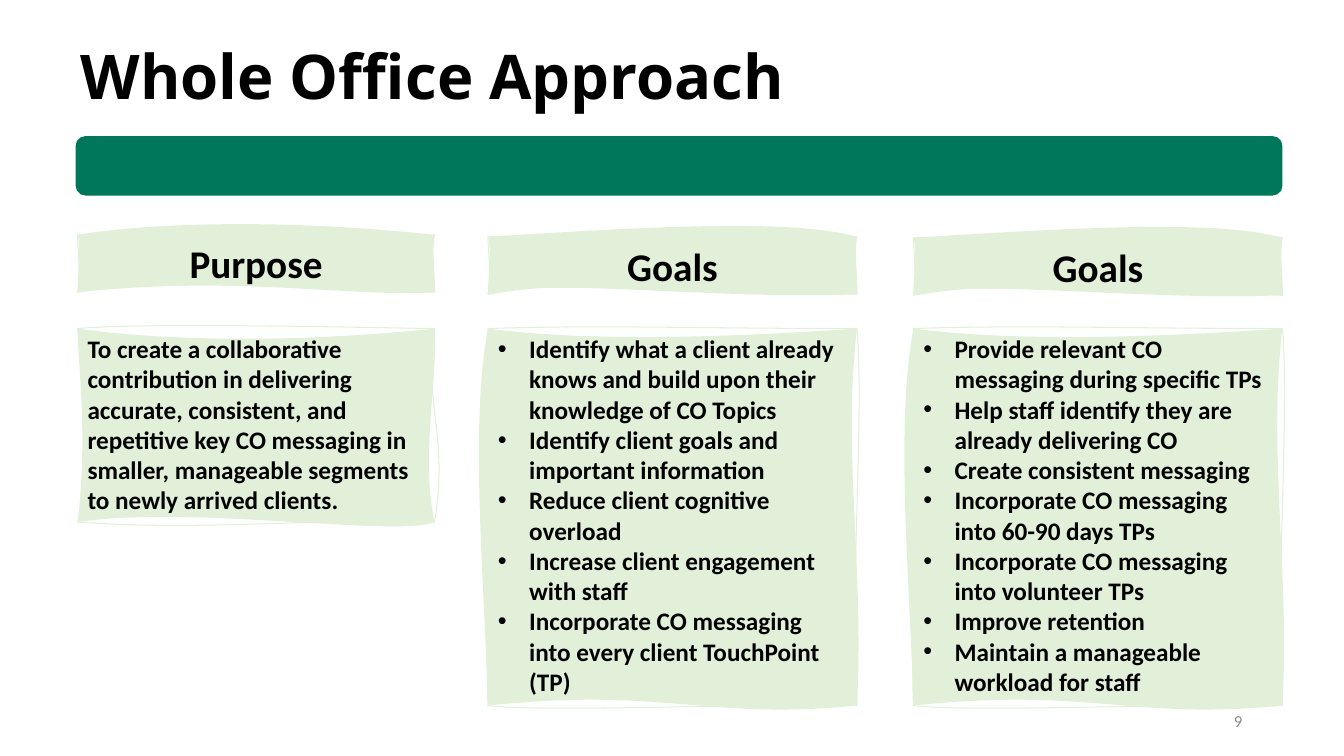
import dataclasses

import lxml.etree
import pptx
import pptx.dml.color
import pptx.enum.shapes
import pptx.enum.text
import pptx.oxml.ns
import pptx.util

Inches = pptx.util.Inches
Align = pptx.enum.text.PP_ALIGN
Anchor = pptx.enum.text.MSO_ANCHOR
qn = pptx.oxml.ns.qn


@dataclasses.dataclass(frozen=True)
class Theme:
    green: str = "00765A"
    pale: str = "E2F0D9"
    ink: str = "000000"
    grey: str = "8C8C8C"
    title_font: str = "Open Sans"
    text_font: str = "Calibri"
    title_size: int = 44
    heading_size: int = 28
    body_size: int = 18
    number_size: int = 12
    bullet_indent: float = 0.31


THEME = Theme()


@dataclasses.dataclass(frozen=True)
class Box:
    left: float
    top: float
    width: float
    height: float

    def lengths(self):
        return [Inches(v) for v in (self.left, self.top, self.width, self.height)]


@dataclasses.dataclass(frozen=True)
class Wave:
    """Curve handles in percent of the box, two for each side, clockwise from the top."""
    outline: tuple
    fill: tuple


CORNERS = ((100, 0), (100, 100), (0, 100), (0, 0))
HEADING_WAVE_NARROW = Wave(
    ((35, -5), (71, 28), (99, 14), (100, 73), (64, 74), (24, 74), (1, 66), (0, 25)),
    ((18, -19), (55, -30), (99, 33), (100, 56), (76, 109), (45, 70), (0, 75), (1, 16)))
HEADING_WAVE_WIDE = Wave(
    ((35, -7), (77, 26), (99, 13), (100, 74), (51, 74), (23, 74), (1, 66), (0, 25)),
    ((46, -19), (83, -31), (99, 32), (100, 54), (61, 110), (16, 70), (0, 75), (1, 16)))
BODY_WAVE_SHORT = Wave(
    ((17, -3), (69, -1), (97, 42), (104, 55), (73, 97), (38, 105), (4, 80), (3, 45)),
    ((27, 7), (64, 7), (101, 27), (96, 65), (90, 108), (31, 91), (3, 54), (0, 17)))
BODY_WAVE_TALL = Wave(
    ((30, -1), (58, 0), (102, 24), (98, 69), (84, 99), (16, 102), (-1, 70), (2, 37)),
    ((23, 3), (56, 3), (96, 33), (102, 63), (59, 104), (48, 95), (-1, 66), (-5, 26)))

PURPOSE = ["To create a collaborative contribution in delivering accurate, consistent, and "
           "repetitive key CO messaging in smaller, manageable segments to newly arrived "
           "clients."]
CLIENT_GOALS = [
    "Identify what a client already knows and build upon their knowledge of CO Topics",
    "Identify client goals and important information",
    "Reduce client cognitive overload",
    "Increase client engagement with staff",
    "Incorporate CO messaging into every client TouchPoint (TP)",
]
STAFF_GOALS = [
    "Provide relevant CO messaging during specific TPs",
    "Help staff identify they are already delivering CO",
    "Create consistent messaging",
    "Incorporate CO messaging into 60-90 days TPs",
    "Incorporate CO messaging into volunteer TPs",
    "Improve retention",
    "Maintain a manageable workload for staff",
]


def rgb(colour):
    return pptx.dml.color.RGBColor.from_string(colour)


def write(frame, lines, size, colour=THEME.ink, font=THEME.text_font, bold=True,
          align=Align.LEFT, anchor=Anchor.TOP, bulleted=False):
    frame.word_wrap = True
    frame.vertical_anchor = anchor
    frame.text = "\n".join(lines)
    for paragraph in frame.paragraphs:
        paragraph.alignment = align
        paragraph.font.name = font
        paragraph.font.size = pptx.util.Pt(size)
        paragraph.font.bold = bold
        paragraph.font.color.rgb = rgb(colour)
        if bulleted:
            add_bullet(paragraph)


def add_bullet(paragraph):
    properties = paragraph._p.get_or_add_pPr()
    indent = Inches(THEME.bullet_indent)
    properties.set("marL", str(indent))
    properties.set("indent", str(-indent))
    bullet_font = lxml.etree.Element(qn("a:buFont"), typeface="Arial")
    bullet = lxml.etree.Element(qn("a:buChar"), char="•")
    properties.insert_element_before(bullet_font, "a:tabLst", "a:defRPr", "a:extLst")
    properties.insert_element_before(bullet, "a:tabLst", "a:defRPr", "a:extLst")


def add_curves(contours, handles, **options):
    """Append one closed contour whose sides are cubic curves."""
    contour = lxml.etree.SubElement(contours, qn("a:path"), w="100", h="100", **options)

    def add_step(tag, points):
        step = lxml.etree.SubElement(contour, qn(tag))
        for x, y in points:
            lxml.etree.SubElement(step, qn("a:pt"), x=str(x), y=str(y))

    add_step("a:moveTo", [CORNERS[-1]])
    for side, corner in enumerate(CORNERS):
        add_step("a:cubicBezTo", [*handles[2 * side:2 * side + 2], corner])
    add_step("a:close", [])


def add_wavy_panel(slide, box, wave):
    """Add a panel whose hand-drawn outline and fill follow different curves."""
    left, top, width, height = box.lengths()
    builder = slide.shapes.build_freeform(left, top)
    builder.add_line_segments(
        [(left + width, top), (left + width, top + height), (left, top + height)])
    panel = builder.convert_to_shape()
    contours = panel._element.spPr.find(".//" + qn("a:pathLst"))
    for straight in list(contours):
        contours.remove(straight)
    add_curves(contours, wave.outline, fill="none")
    add_curves(contours, wave.fill, stroke="0")
    panel.shadow.inherit = False
    panel.fill.solid()
    panel.fill.fore_color.rgb = rgb(THEME.pale)
    panel.line.color.rgb = rgb(THEME.pale)
    panel.line.width = pptx.util.Pt(0.75)
    return panel


def add_column(slide, box, heading, lines, heading_wave, body_wave, bulleted=True):
    heading_height, body_top = 0.57, 3.26
    heading_box = Box(box.left, box.top, box.width, heading_height)
    heading_panel = add_wavy_panel(slide, heading_box, heading_wave)
    write(heading_panel.text_frame, [heading], THEME.heading_size, align=Align.CENTER)

    body_box = Box(box.left, body_top, box.width, box.top + box.height - body_top)
    body_panel = add_wavy_panel(slide, body_box, body_wave)
    write(body_panel.text_frame, lines, THEME.body_size, bulleted=bulleted)


def add_title(slide, box, text):
    title = slide.shapes.title
    title.left, title.top, title.width, title.height = box.lengths()
    write(title.text_frame, [text], THEME.title_size, font=THEME.title_font,
          anchor=Anchor.MIDDLE)


def add_bar(slide, box):
    bar = slide.shapes.add_shape(
        pptx.enum.shapes.MSO_SHAPE.ROUNDED_RECTANGLE, *box.lengths())
    bar.shadow.inherit = False
    bar.fill.solid()
    bar.fill.fore_color.rgb = rgb(THEME.green)
    bar.line.fill.background()


def add_slide_number(slide, box, number):
    frame = slide.shapes.add_textbox(*box.lengths()).text_frame
    write(frame, [number], THEME.number_size, THEME.grey, bold=False,
          align=Align.RIGHT, anchor=Anchor.MIDDLE)


def main():
    deck = pptx.Presentation()
    deck.slide_width, deck.slide_height = Inches(13.33), Inches(7.5)
    slide = deck.slides.add_slide(deck.slide_layouts.get_by_name("Title Only"))
    add_title(slide, Box(0.7, 0.32, 12.19, 0.84), "Whole Office Approach")
    add_bar(slide, Box(0.75, 1.35, 11.97, 0.59))
    add_column(slide, Box(0.77, 2.33, 3.54, 2.85), "Purpose", PURPOSE,
               HEADING_WAVE_NARROW, BODY_WAVE_SHORT, bulleted=False)
    add_column(slide, Box(4.84, 2.35, 3.66, 4.65), "Goals", CLIENT_GOALS,
               HEADING_WAVE_WIDE, BODY_WAVE_TALL)
    add_column(slide, Box(9.06, 2.36, 3.66, 4.64), "Goals", STAFF_GOALS,
               HEADING_WAVE_WIDE, BODY_WAVE_TALL)
    add_slide_number(slide, Box(9.42, 6.95, 3, 0.4), "9")
    deck.save("out.pptx")


if __name__ == "__main__":
    main()
